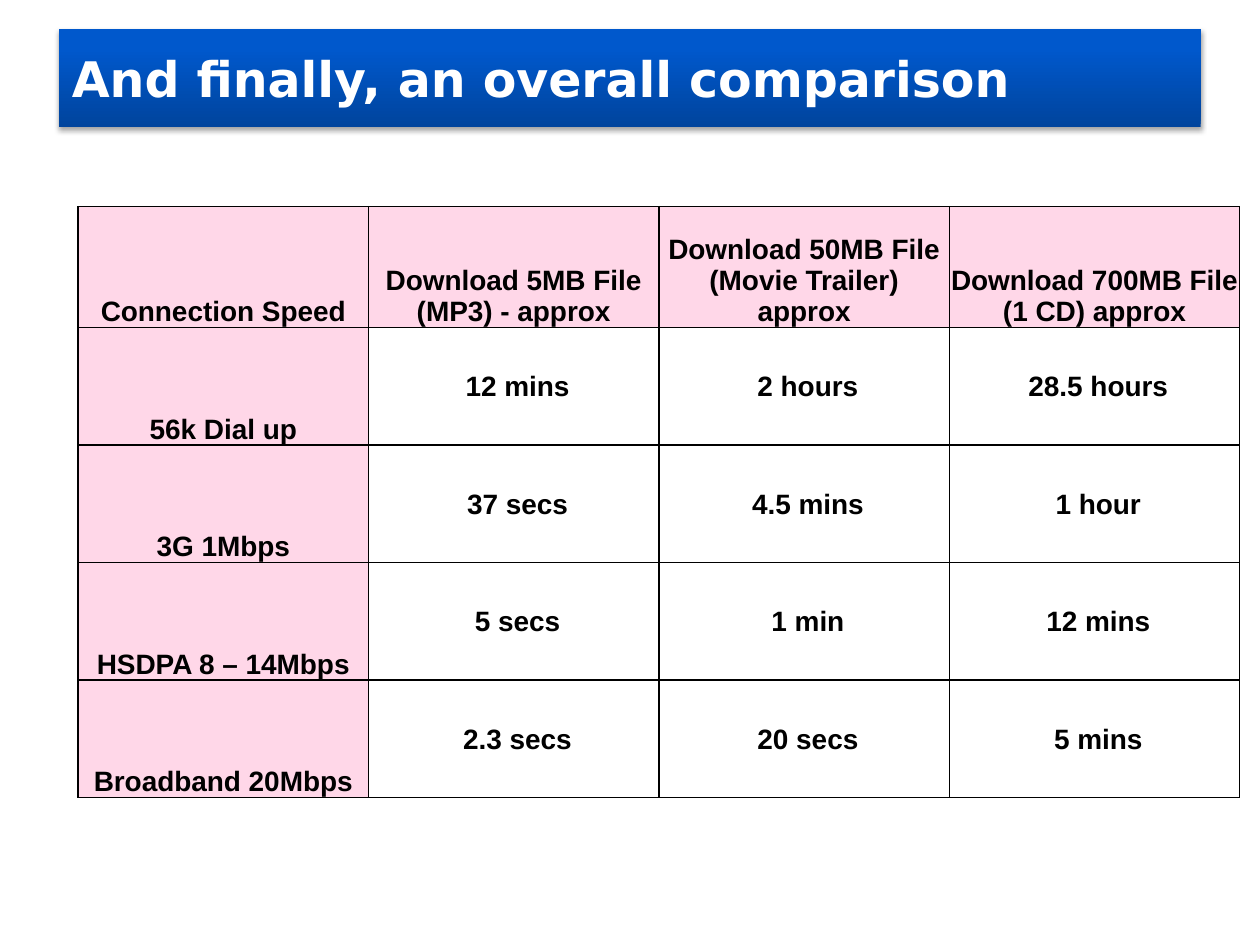
from pptx import Presentation
from pptx.dml.color import RGBColor
from pptx.enum.text import MSO_ANCHOR as Anchor, PP_ALIGN as Align
from pptx.oxml import parse_xml
from pptx.oxml.ns import nsdecls
from pptx.util import Inches, Pt

WHITE = RGBColor(0xFF, 0xFF, 0xFF)
BLACK = RGBColor(0x00, 0x00, 0x00)
PINK = RGBColor(0xFF, 0xD7, 0xE8)
NAVY = RGBColor(0x00, 0x44, 0x9D)
BLUE = RGBColor(0x00, 0x58, 0xCC)
BRIGHT_BLUE = RGBColor(0x00, 0x59, 0xCD)

BANNER_STOPS = [(0, NAVY), (80, BLUE), (100, BRIGHT_BLUE)]
TITLE = "And finally, an overall comparison"
COMPARISON = [
    ["Connection Speed", "Download 5MB File (MP3) - approx",
     "Download 50MB File (Movie Trailer) approx",
     "Download 700MB File (1 CD) approx"],
    ["56k Dial up", "12 mins", "2 hours", "28.5 hours"],
    ["3G 1Mbps", "37 secs", "4.5 mins", "1 hour"],
    ["HSDPA 8 – 14Mbps", "5 secs", "1 min", "12 mins"],
    ["Broadband 20Mbps", "2.3 secs", "20 secs", "5 mins"],
]


def write_text(frame, text, *, font, size, color, align, anchor):
    frame.word_wrap = True
    frame.vertical_anchor = anchor
    para = frame.paragraphs[0]
    para.alignment = align
    span = para.add_run()
    span.text = text
    span.font.name = font
    span.font.size = Pt(size)
    span.font.bold = True
    span.font.color.rgb = color


def add_xml(parent, xml):
    tag_end = min(xml.index(mark) for mark in " >" if mark in xml)
    parent.append(parse_xml(f"{xml[:tag_end]} {nsdecls('a')}{xml[tag_end:]}"))


def style_banner(banner):
    properties = banner.element.spPr
    stops = "".join(
        f'<a:gs pos="{share * 1000}"><a:srgbClr val="{color}"/></a:gs>'
        for share, color in BANNER_STOPS)
    add_xml(properties, '<a:prstGeom prst="roundRect"><a:avLst/></a:prstGeom>')
    add_xml(properties, f'<a:gradFill rotWithShape="1"><a:gsLst>{stops}</a:gsLst>'
                        f'<a:lin ang="{270 * 60000}" scaled="0"/></a:gradFill>')
    add_xml(properties, '<a:ln ><a:noFill/></a:ln>')
    add_xml(properties, f'<a:effectLst><a:outerShdw blurRad="{Pt(3.1)}" dist="{Pt(1.8)}" '
                        f'dir="{90 * 60000}" rotWithShape="0"><a:srgbClr val="{BLACK}">'
                        '<a:alpha val="35000"/></a:srgbClr></a:outerShdw></a:effectLst>')


def place_title(page, left, top, width, height):
    banner = page.shapes.title
    banner.left, banner.top = Inches(left), Inches(top)
    banner.width, banner.height = Inches(width), Inches(height)
    style_banner(banner)
    write_text(banner.text_frame, TITLE, font="DejaVu Sans", size=28,
               color=WHITE, align=Align.LEFT, anchor=Anchor.MIDDLE)


def add_borders(cell):
    properties = cell._tc.get_or_add_tcPr()
    for side in "LRTB":
        add_xml(properties, f'<a:ln{side} w="{Pt(1)}"><a:solidFill>'
                            f'<a:srgbClr val="{BLACK}"/></a:solidFill></a:ln{side}>')


def format_cell(cell, text, is_label):
    add_borders(cell)
    cell.fill.solid()
    cell.fill.fore_color.rgb = PINK if is_label else WHITE
    cell.margin_left = Inches(0.01 if is_label else 0.07)
    cell.margin_right = cell.margin_top = Inches(0.01)
    cell.margin_bottom = 0
    anchor = Anchor.BOTTOM if is_label else Anchor.MIDDLE
    write_text(cell.text_frame, text, font="Arial", size=16,
               color=BLACK, align=Align.CENTER, anchor=anchor)
    cell.vertical_anchor = anchor


def place_comparison(page, left, top, width, height, header_height):
    row_count, column_count = len(COMPARISON), len(COMPARISON[0])
    table = page.shapes.add_table(row_count, column_count, Inches(left), Inches(top),
                                  Inches(width), Inches(height)).table
    table.first_row = table.horz_banding = False
    body_height = (height - header_height) / (row_count - 1)
    for column in table.columns:
        column.width = Inches(width / column_count)
    for row_index, values in enumerate(COMPARISON):
        table.rows[row_index].height = Inches(body_height if row_index else header_height)
        for column_index, text in enumerate(values):
            format_cell(table.cell(row_index, column_index), text,
                        is_label=row_index == 0 or column_index == 0)


def main():
    deck = Presentation()
    deck.slide_width, deck.slide_height = Inches(10), Inches(7.5)
    page = deck.slides.add_slide(deck.slide_layouts[5])
    place_title(page, 0.47, 0.23, 9.06, 0.78)
    place_comparison(page, 0.62, 1.64, 9.22, 4.69, header_height=0.96)
    deck.save("out.pptx")


if __name__ == "__main__":
    main()
